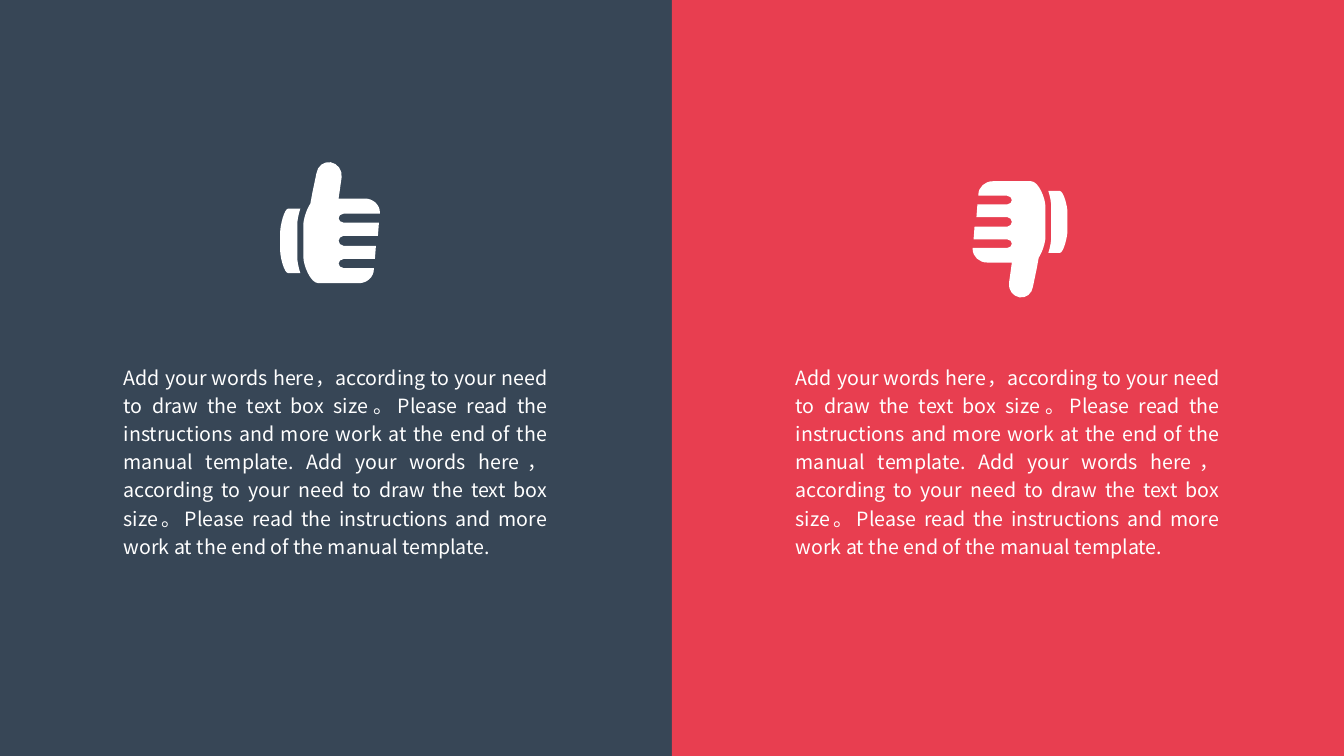
import pptx
import pptx.util
import pptx.dml.color
import pptx.enum.shapes
import pptx.enum.text
import pptx.oxml.ns
import lxml.etree

HEIGHT = 7.5
WIDTH = HEIGHT * 16 / 9
FONT = "Noto Sans CJK JP"
WHITE = "FFFFFF"
SENTENCES = (
    "Add your words here，according to your need to draw the text box size。"
    "Please read the instructions and more work at the end of the manual template."
)
OPINION = " ".join([SENTENCES] * 2)
SIDES = [
    {"color": "374656", "thumb_origin": (2.78, 1.6), "thumb_scale": (0.01, 0.01)},
    {"color": "E83E50", "thumb_origin": (10.59, 2.96), "thumb_scale": (-0.0095, -0.0096)},
]
FINGER_GAPS = [(93, 106, 94, 97), (95, 84, 97, 74), (98, 61, 99, 52)]


def finger_gap(lower_x, lower_y, upper_x, upper_y):
    middle = (lower_y + upper_y) / 2
    return [
        (lower_x, lower_y), (63, lower_y),
        (60, lower_y, 58, middle + 2, 58, middle),
        (58, middle - 2, 60, upper_y, 63, upper_y),
        (upper_x, upper_y),
    ]


CUFF = [
    (17, 63), (17, 59, 18, 53, 20, 47), (8, 47), (4, 47, 0, 64, 0, 70),
    (0, 89), (0, 95, 4, 111, 8, 111), (20, 111), (18, 105, 17, 99, 17, 95),
]
HAND = [
    (30, 42), (26, 48, 23, 58, 23, 63), (23, 95), (23, 103, 30, 121, 38, 121),
    (78, 121), (86, 121, 93, 115, 93, 107),
    *[step for gap in FINGER_GAPS for step in finger_gap(*gap)],
    (99, 51), (99, 43, 92, 37, 84, 37), (58, 37), (59, 30), (61, 16),
    (62, 9, 57, 2, 50, 1), (43, 0, 37, 5, 36, 12), (32, 31),
]


def rgb(color):
    return pptx.dml.color.RGBColor.from_string(color)


def add_xml(parent, tag, **attributes):
    child = lxml.etree.SubElement(parent, pptx.oxml.ns.qn(tag))
    for key, value in attributes.items():
        child.set(key, str(value))
    return child


def paint(shape, color):
    shape.shadow.inherit = False
    shape.fill.solid()
    shape.fill.fore_color.rgb = rgb(color)
    shape.line.fill.background()


def add_outline(group, outline, origin, scale):
    steps = [
        [
            tuple(pptx.util.Inches(o + s * v) for o, s, v in zip(origin, scale, pair))
            for pair in zip(step[::2], step[1::2])
        ]
        for step in outline
    ]
    anchors = [step[-1] for step in steps]
    builder = group.shapes.build_freeform(*anchors[0], scale=1.0)
    builder.add_line_segments(anchors[1:], close=False)
    shape = builder.convert_to_shape()
    left, top = map(min, zip(*anchors))
    contour = next(shape.element.iter(pptx.oxml.ns.qn("a:path")))
    for segment in list(contour):
        contour.remove(segment)
    for index, step in enumerate(steps):
        tag = "a:moveTo" if index == 0 else "a:lnTo" if len(step) == 1 else "a:cubicBezTo"
        segment = add_xml(contour, tag)
        for x, y in step:
            add_xml(segment, "a:pt", x=x - left, y=y - top)
    add_xml(contour, "a:close")
    paint(shape, WHITE)


def add_opinion(slide, left):
    box = slide.shapes.add_textbox(*map(pptx.util.Inches, (left, 3.53, 4.4, 2.66)))
    frame = box.text_frame
    frame.word_wrap = True
    frame.auto_size = pptx.enum.text.MSO_AUTO_SIZE.SHAPE_TO_FIT_TEXT
    paragraph = frame.paragraphs[0]
    paragraph.alignment = pptx.enum.text.PP_ALIGN.JUSTIFY
    paragraph.line_spacing = 1.2
    paragraph.space_before = pptx.util.Pt(0)
    spacing = next(box.element.iter(pptx.oxml.ns.qn("a:spcBef")))
    spacing.remove(spacing[0])
    add_xml(spacing, "a:spcPct", val=20000)
    run = paragraph.add_run()
    run.text = OPINION
    run.font.size = pptx.util.Pt(14)
    run.font.name = FONT
    run.font.color.rgb = rgb(WHITE)
    add_xml(next(box.element.iter(pptx.oxml.ns.qn("a:rPr"))), "a:ea", typeface=FONT)


def main():
    deck = pptx.Presentation()
    deck.slide_width = pptx.util.Inches(WIDTH)
    deck.slide_height = pptx.util.Inches(HEIGHT)
    slide = deck.slides.add_slide(deck.slide_layouts[6])
    half = WIDTH / len(SIDES)

    panels = slide.shapes.add_group_shape()
    for column, side in enumerate(SIDES):
        panel = panels.shapes.add_shape(
            pptx.enum.shapes.MSO_SHAPE.RECTANGLE,
            *map(pptx.util.Inches, (column * half, 0, half, HEIGHT)),
        )
        paint(panel, side["color"])

    for column in range(len(SIDES)):
        add_opinion(slide, column * half + 1.13)

    for side in SIDES:
        thumb = slide.shapes.add_group_shape()
        for outline in (CUFF, HAND):
            add_outline(thumb, outline, side["thumb_origin"], side["thumb_scale"])

    deck.save("out.pptx")


if __name__ == "__main__":
    main()
